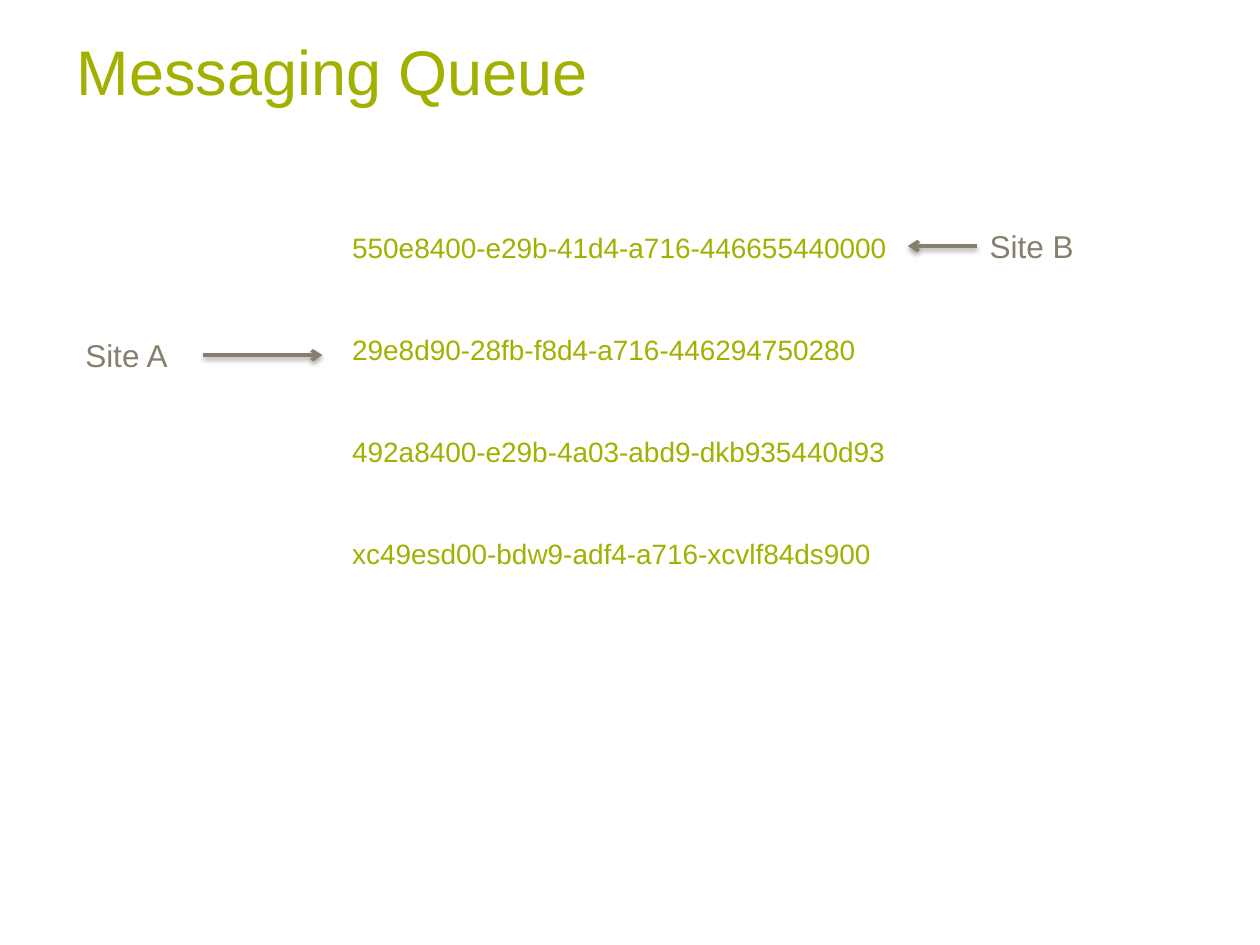
from dataclasses import dataclass

from lxml import etree
from pptx import Presentation
from pptx import util as u
from pptx.dml.color import RGBColor
from pptx.enum import shapes, text
from pptx.oxml import ns

COLORS = {"green": "A2B000", "taupe": "887E6E", "shadow": "000000"}
FONT = "Arial"


@dataclass
class Label:
    lines: list[str]
    left: float
    top: float
    width: float
    height: float
    size: int
    color: str
    margins: tuple[float, float] = (0, 0)
    gap: int = 0
    anchor: text.MSO_ANCHOR = text.MSO_ANCHOR.TOP


@dataclass
class Arrow:
    start: float
    end: float
    height: float


def add_label(slide, label: Label):
    shape = slide.shapes.add_textbox(
        u.Cm(label.left), u.Cm(label.top), u.Cm(label.width), u.Cm(label.height))
    frame = shape.text_frame
    frame.word_wrap = True
    frame.vertical_anchor = label.anchor
    frame.margin_left = frame.margin_right = u.Cm(label.margins[0])
    frame.margin_top = frame.margin_bottom = u.Cm(label.margins[1])
    for index, line in enumerate(label.lines):
        paragraph = frame.add_paragraph() if index else frame.paragraphs[0]
        paragraph.space_after = u.Pt(label.gap)
        run = paragraph.add_run()
        run.text = line
        run.font.name = FONT
        run.font.size = u.Pt(label.size)
        run.font.color.rgb = RGBColor.from_string(COLORS[label.color])
    return shape


def add_arrow(slide, arrow: Arrow):
    """Draw a horizontal arrow with an open head and a soft shadow below."""
    connector = slide.shapes.add_connector(
        shapes.MSO_CONNECTOR.STRAIGHT, u.Cm(arrow.start), u.Cm(arrow.height),
        u.Cm(arrow.end), u.Cm(arrow.height))
    connector.line.color.rgb = RGBColor.from_string(COLORS["taupe"])
    connector.line.width = u.Pt(2)
    etree.SubElement(connector.line._get_or_add_ln(), ns.qn("a:tailEnd"), type="arrow")
    effects = etree.SubElement(connector._element.spPr, ns.qn("a:effectLst"))
    shadow = etree.SubElement(
        effects, ns.qn("a:outerShdw"), blurRad=str(u.Pt(3.1)), dist=str(u.Pt(1.6)),
        dir="5400000", rotWithShape="0")
    color = etree.SubElement(shadow, ns.qn("a:srgbClr"), val=COLORS["shadow"])
    etree.SubElement(color, ns.qn("a:alpha"), val="38000")
    return connector


def site_label(name: str, left: float, top: float) -> Label:
    return Label([name], left, top, 4.4, 1.02, 18, "taupe", margins=(0.25, 0.13))


def main():
    presentation = Presentation()
    presentation.slide_width, presentation.slide_height = u.Cm(25.4), u.Cm(19.05)
    slide = presentation.slides.add_slide(presentation.slide_layouts[6])

    add_label(slide, Label(["Messaging Queue"], 1.55, 0.66, 20.42, 1.52, 36, "green",
                           anchor=text.MSO_ANCHOR.BOTTOM))
    message_ids = [
        "550e8400-e29b-41d4-a716-446655440000",
        "29e8d90-28fb-f8d4-a716-446294750280",
        "492a8400-e29b-4a03-abd9-dkb935440d93",
        "xc49esd00-bdw9-adf4-a716-xcvlf84ds900",
    ]
    add_label(slide, Label(message_ids, 7.1, 4.65, 11.6, 8.28, 16, "green", gap=39))

    add_label(slide, site_label("Site A", 1.47, 6.65))
    site_b = add_label(slide, site_label("Site B", 19.7, 4.45))
    add_arrow(slide, Arrow(4.1, 6.5, 7.16))
    arrow_b = add_arrow(slide, Arrow(19.7, 18.3, 4.96))
    arrow_b.begin_connect(site_b, 1)

    presentation.save("out.pptx")


if __name__ == "__main__":
    main()
